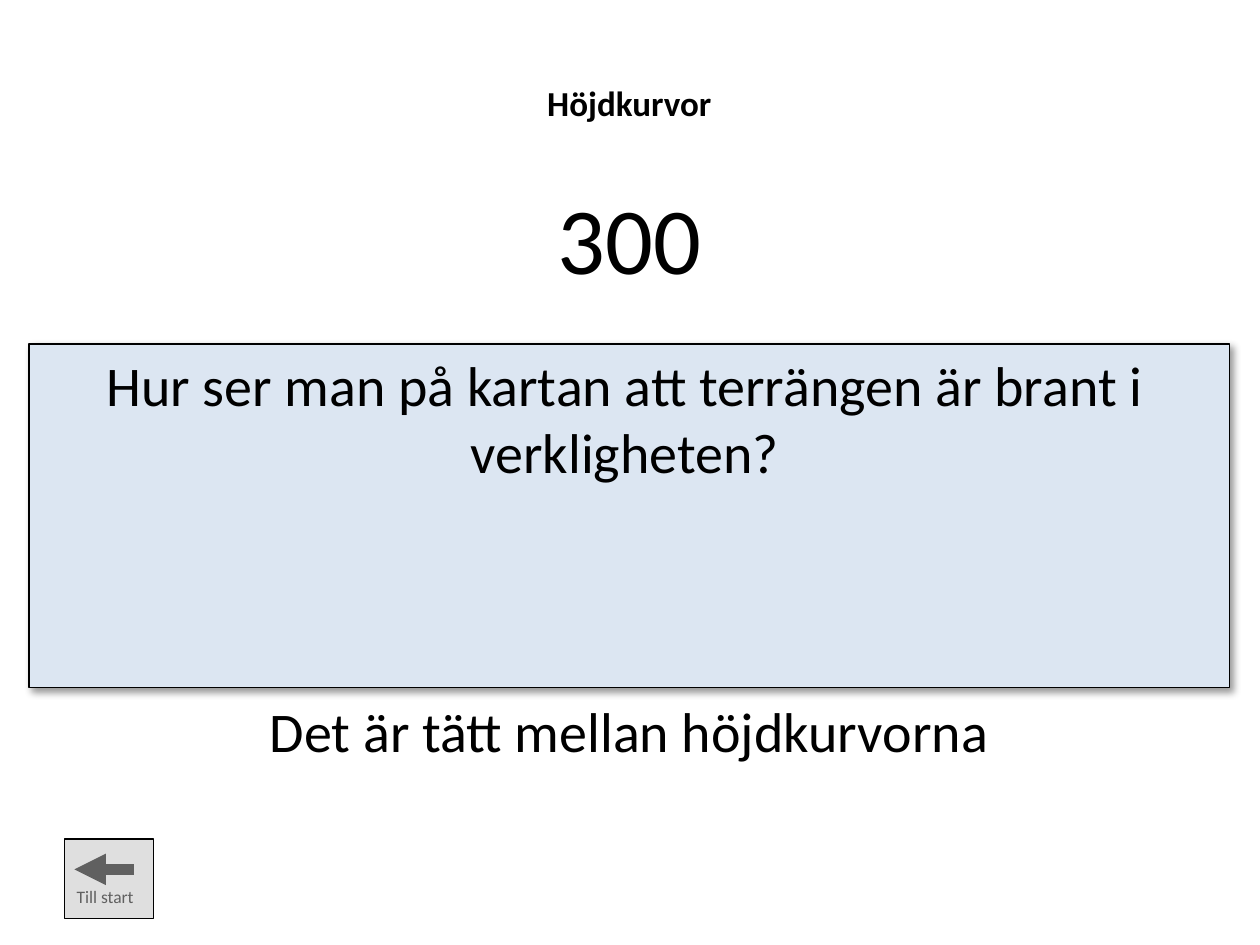
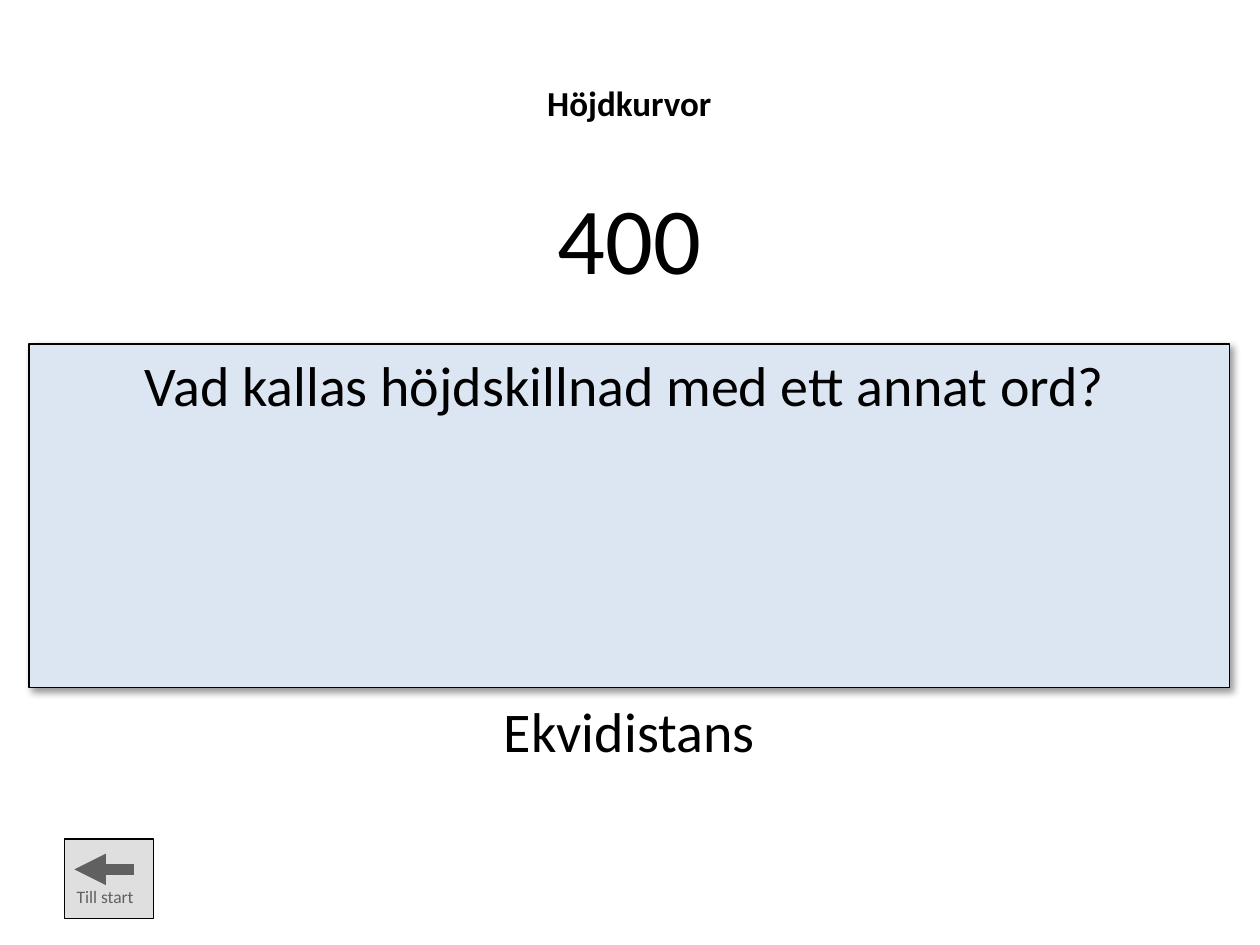
from lxml import etree
from pptx import Presentation
from pptx.dml.color import RGBColor
from pptx.enum.shapes import MSO_CONNECTOR, MSO_SHAPE
from pptx.enum.text import PP_ALIGN
from pptx.oxml.ns import qn
from pptx.util import Emu, Pt

PX = 9144  # 100 px to the inch
BLACK = RGBColor(0x00, 0x00, 0x00)
PANEL_BLUE = RGBColor(0xDC, 0xE6, 0xF2)
BUTTON_GREY = RGBColor(0xC0, 0xC0, 0xC0)
RECT, STRAIGHT = MSO_SHAPE.RECTANGLE, MSO_CONNECTOR.STRAIGHT
LEFT, CENTER = PP_ALIGN.LEFT, PP_ALIGN.CENTER
FONT = "Calibri"

CATEGORY = "Höjdkurvor"
CARDS = [
    ("300", "Hur ser man på kartan att terrängen är brant i verkligheten?", 118,
     "Det är tätt mellan höjdkurvorna"),
    ("400", "Vad kallas höjdskillnad med ett annat ord?", 64, "Ekvidistans"),
]


def add_box(s, box, fill):
    sp = s.shapes.add_shape(RECT, *[Emu(v * PX) for v in box])
    sp.shadow.inherit = False
    sp.fill.solid()
    sp.fill.fore_color.rgb = fill
    sp.line.color.rgb = BLACK
    sp.line.width = Pt(0.75)
    return sp


def add_text(s, box, lines, align=CENTER):
    """Each line is (text, size, bold, space before)."""
    tf = s.shapes.add_textbox(*[Emu(v * PX) for v in box]).text_frame
    tf.word_wrap = True
    for i, (text, size, bold, before) in enumerate(lines):
        p = tf.paragraphs[0] if i == 0 else tf.add_paragraph()
        p.text = text
        p.alignment = align
        p.space_before = Pt(before)
        p.font.name = FONT
        p.font.size = Pt(size)
        p.font.bold = bold
        p.font.color.rgb = BLACK


prs = Presentation()
prs.slide_width, prs.slide_height = Emu(1000 * PX), Emu(750 * PX)

for points, question, question_height, answer in CARDS:
    s = prs.slides.add_slide(prs.slide_layouts[6])

    # Question panel with a soft shadow
    panel = add_box(s, (23, 273, 953, 273), PANEL_BLUE)
    effects = panel._element.spPr.find(qn("a:effectLst"))
    shadow = etree.SubElement(effects, qn("a:outerShdw"), blurRad=str(Pt(4)),
                              dist=str(Pt(3)), dir="2700000", algn="tl", rotWithShape="0")
    color = etree.SubElement(shadow, qn("a:srgbClr"), val=str(BLACK))
    etree.SubElement(color, qn("a:alpha"), val="40000")

    # Category and points
    add_text(s, (27, 60, 945, 180), [(CATEGORY, 20, True, 0), (points, 54, False, 32)])

    # Start button: arrow and label under a half-transparent plate
    arrow = s.shapes.add_connector(STRAIGHT, *[Emu(v * PX) for v in (106, 690, 59, 690)])
    arrow.line.color.rgb = BLACK
    arrow.line.width = Pt(6)
    etree.SubElement(arrow.line._get_or_add_ln(), qn("a:tailEnd"), type="triangle")
    etree.SubElement(arrow._element.spPr, qn("a:effectLst"))
    add_text(s, (51, 698, 71, 27), [("Till start", 10, False, 0)], LEFT)
    plate = add_box(s, (51, 666, 71, 63), BUTTON_GREY)
    color = plate._element.spPr.find(qn("a:solidFill")).find(qn("a:srgbClr"))
    etree.SubElement(color, qn("a:alpha"), val="50000")

    # Question and answer
    add_text(s, (31, 273, 930, question_height), [(question, 32, False, 0)])
    add_text(s, (27, 548, 945, 63), [(answer, 32, False, 0)])

prs.save("out.pptx")
